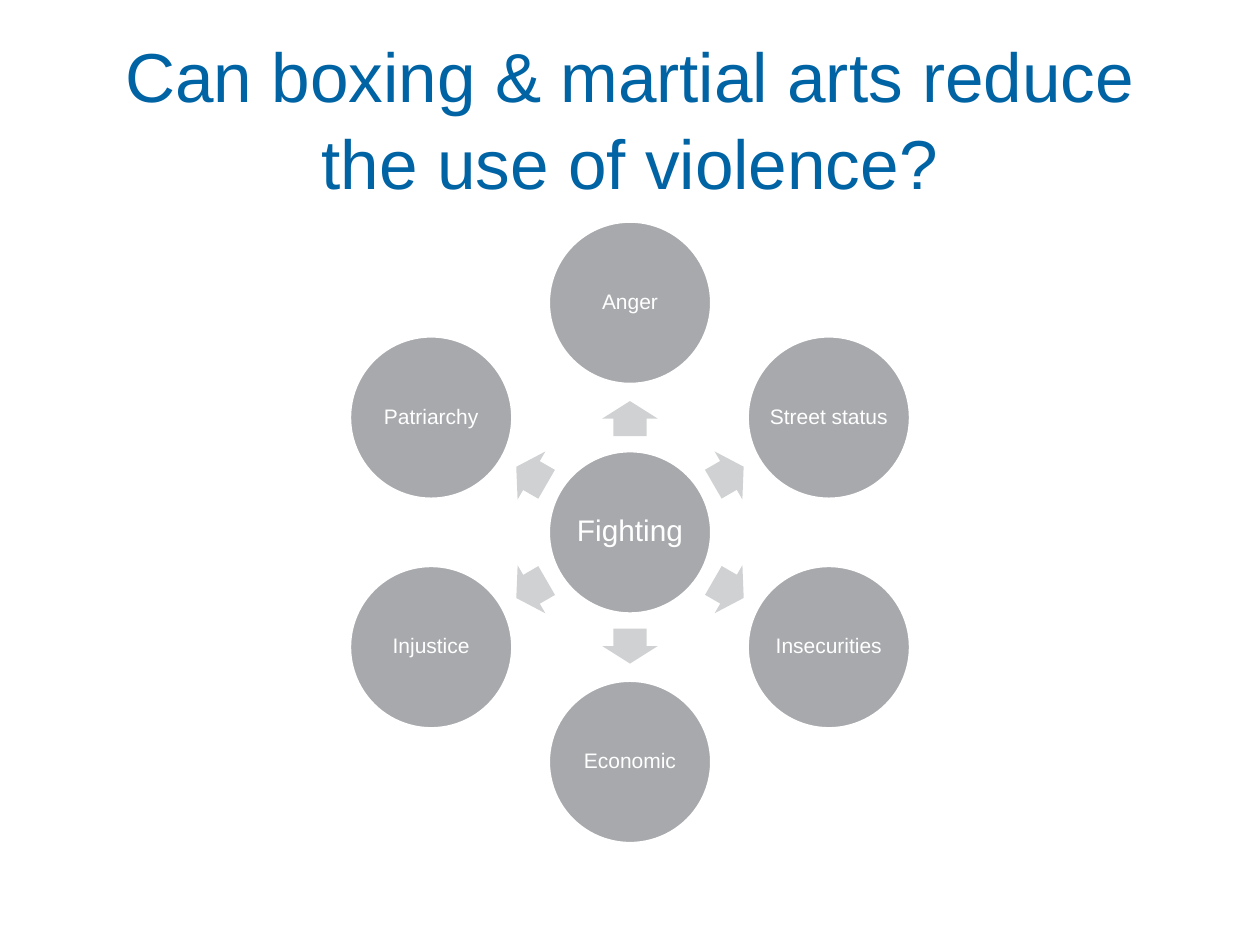
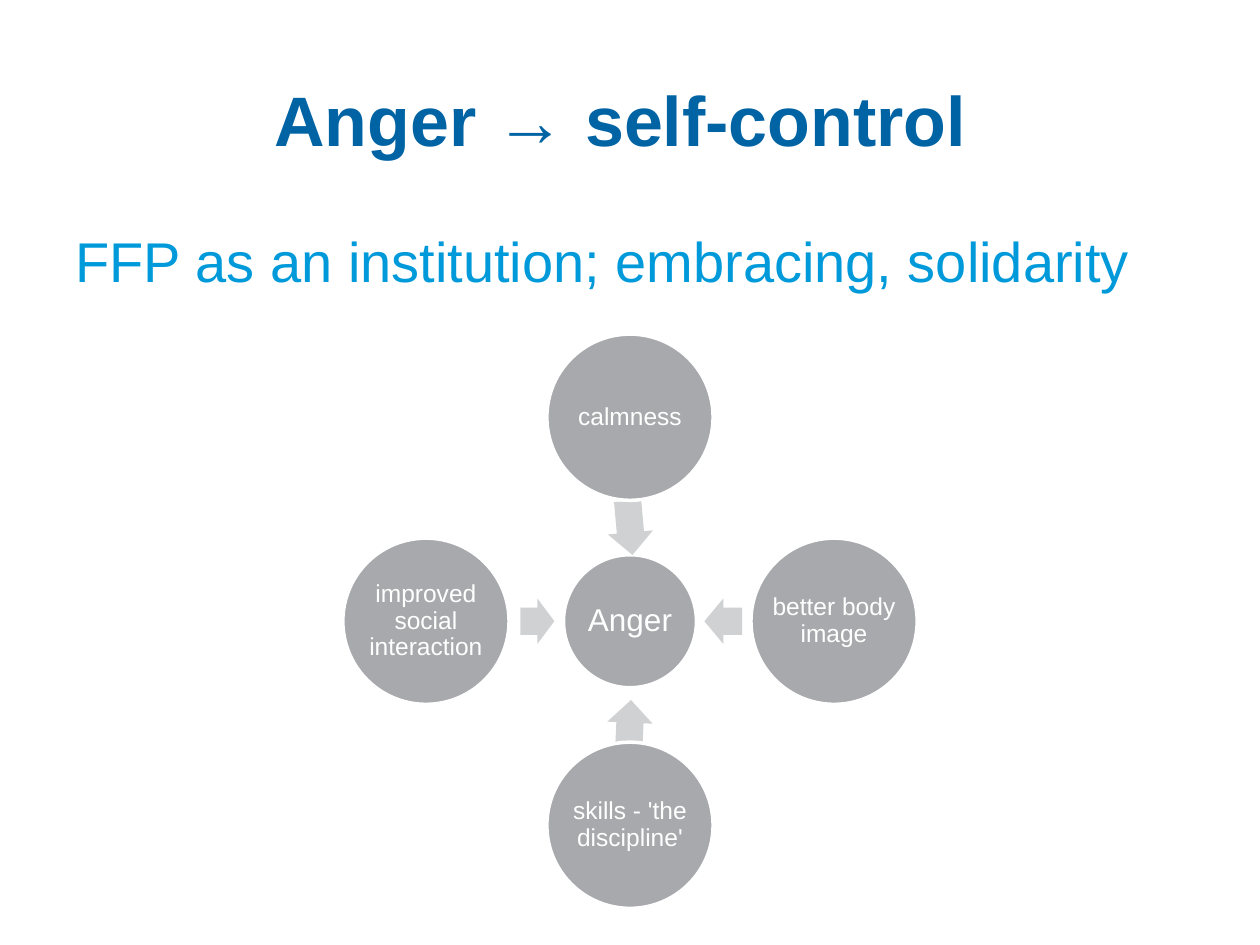
from dataclasses import dataclass
from math import cos, radians, sin

from pptx import Presentation
from pptx.dml.color import RGBColor
from pptx.enum.shapes import MSO_SHAPE
from pptx.enum.text import MSO_ANCHOR, PP_ALIGN
from pptx.util import Pt


@dataclass(frozen=True)
class Theme:
    """Colours, font and type sizes shared by the slides."""
    font: str = "Arial"
    title: RGBColor = RGBColor(0x00, 0x63, 0xA4)
    body: RGBColor = RGBColor(0x00, 0x9A, 0xDA)
    circle: RGBColor = RGBColor(0xA7, 0xA9, 0xAC)
    arrow: RGBColor = RGBColor(0xD0, 0xD1, 0xD2)
    white: RGBColor = RGBColor(0xFF, 0xFF, 0xFF)
    body_size: float = 32
    title_spacing: float = 1.04
    label_spacing: float = 0.9
    outline: float = 2


@dataclass(frozen=True)
class Box:
    """A rectangle in points."""
    left: float
    top: float
    width: float
    height: float

    @classmethod
    def around(cls, x, y, width, height):
        """Return the box centred on a point."""
        return cls(x - width / 2, y - height / 2, width, height)

    @property
    def center(self):
        """Return the middle point."""
        return self.left + self.width / 2, self.top + self.height / 2

    def lengths(self):
        """Return the four lengths that python-pptx expects."""
        return [Pt(value) for value in (self.left, self.top, self.width, self.height)]


@dataclass(frozen=True)
class Spoke:
    """An outer circle and the arrow between it and the hub."""
    label: str
    arrow_length: float = 20
    arrow_distance: float = 65
    tilt: float = 0


@dataclass(frozen=True)
class Wheel:
    """Measures of a radial diagram."""
    hub_diameter: float
    hub_size: float
    diameter: float
    label_size: float
    radius: float
    arrow_width: float
    inward: bool


THEME = Theme()
TITLE_BOX = Box(36, 21.6, 648, 90)
BODY_BOX = Box(36, 126, 648, 356.4)


def add_text(shapes, box, text, size, color, bold=False, align=PP_ALIGN.CENTER,
             anchor=MSO_ANCHOR.MIDDLE, spacing=None, inset=None):
    """Add one paragraph of wrapped text in a box."""
    text_frame = shapes.add_textbox(*box.lengths()).text_frame
    text_frame.word_wrap = True
    text_frame.vertical_anchor = anchor
    if inset is not None:
        text_frame.margin_left = text_frame.margin_right = Pt(inset)
        text_frame.margin_top = text_frame.margin_bottom = Pt(inset)
    text_frame.text = text
    paragraph = text_frame.paragraphs[0]
    paragraph.alignment = align
    paragraph.line_spacing = spacing
    font = paragraph.runs[0].font
    font.name, font.size, font.bold = THEME.font, Pt(size), bold
    font.color.rgb = color


def add_title(slide, box, text, size, bold=False):
    """Add the slide title."""
    add_text(slide.shapes, box, text, size, THEME.title, bold,
             spacing=THEME.title_spacing)


def add_filled(shapes, kind, box, color):
    """Add a filled preset shape without outline or shadow."""
    shape = shapes.add_shape(kind, *box.lengths())
    shape.shadow.inherit = False
    shape.fill.solid()
    shape.fill.fore_color.rgb = color
    shape.line.fill.background()
    return shape


def add_circle(shapes, box, label, size):
    """Add a labelled circle."""
    circle = add_filled(shapes, MSO_SHAPE.OVAL, box, THEME.circle)
    circle.line.color.rgb = THEME.white
    circle.line.width = Pt(THEME.outline)
    add_text(shapes, box, label, size, THEME.white,
             spacing=THEME.label_spacing, inset=1.5)


def add_wheel(slide, box, hub, spokes, wheel):
    """Add a hub with circles spread clockwise around it from the top."""
    shapes = slide.shapes.add_group_shape().shapes
    x, y = box.center
    add_circle(shapes, Box.around(x, y, wheel.hub_diameter, wheel.hub_diameter),
               hub, wheel.hub_size)
    for index, spoke in enumerate(spokes):
        angle = 360 * index / len(spokes) - 90
        across, down = cos(radians(angle)), sin(radians(angle))
        arrow_box = Box.around(x + spoke.arrow_distance * across,
                               y + spoke.arrow_distance * down,
                               spoke.arrow_length, wheel.arrow_width)
        arrow = add_filled(shapes, MSO_SHAPE.RIGHT_ARROW, arrow_box, THEME.arrow)
        arrow.adjustments[0], arrow.adjustments[1] = 0.6, 0.5
        arrow.rotation = (angle + 180 * wheel.inward + spoke.tilt) % 360
        circle_box = Box.around(x + wheel.radius * across, y + wheel.radius * down,
                                wheel.diameter, wheel.diameter)
        add_circle(shapes, circle_box, spoke.label, wheel.label_size)


def build_causes_slide(slide):
    """Build the slide on what lies behind fighting."""
    add_title(slide, TITLE_BOX,
              "Can boxing & martial arts reduce the use of violence?", 39.6)
    labels = ["Anger", "Street status", "Insecurities", "Economic",
              "Injustice", "Patriarchy"]
    wheel = Wheel(hub_diameter=93.4, hub_size=17, diameter=93.4, label_size=12,
                  radius=131.2, arrow_width=31.7, inward=False)
    add_wheel(slide, BODY_BOX, "Fighting", [Spoke(label) for label in labels], wheel)


def build_self_control_slide(slide):
    """Build the slide on turning anger into self-control."""
    add_title(slide, TITLE_BOX, "Anger → self-control ", 40, bold=True)
    add_text(slide.shapes, BODY_BOX, "FFP as an institution; embracing, solidarity",
             THEME.body_size, THEME.body, align=PP_ALIGN.LEFT, anchor=MSO_ANCHOR.TOP)
    spokes = [Spoke("calmness", 31, 53.3, -5.1),
              Spoke("better body image", 21.6, 53.3),
              Spoke("skills - 'the discipline'", 26.6, 58.3, 2.6),
              Spoke("improved social interaction", 19.4, 52.9)]
    wheel = Wheel(hub_diameter=76, hub_size=18, diameter=95, label_size=14,
                  radius=116.6, arrow_width=25.9, inward=True)
    add_wheel(slide, Box(196, 191, 328, 328), "Anger", spokes, wheel)


def main():
    """Build and save the presentation."""
    presentation = Presentation()
    presentation.slide_width, presentation.slide_height = Pt(720), Pt(540)
    for build in (build_causes_slide, build_self_control_slide):
        build(presentation.slides.add_slide(presentation.slide_layouts[6]))
    presentation.save("out.pptx")


if __name__ == "__main__":
    main()
